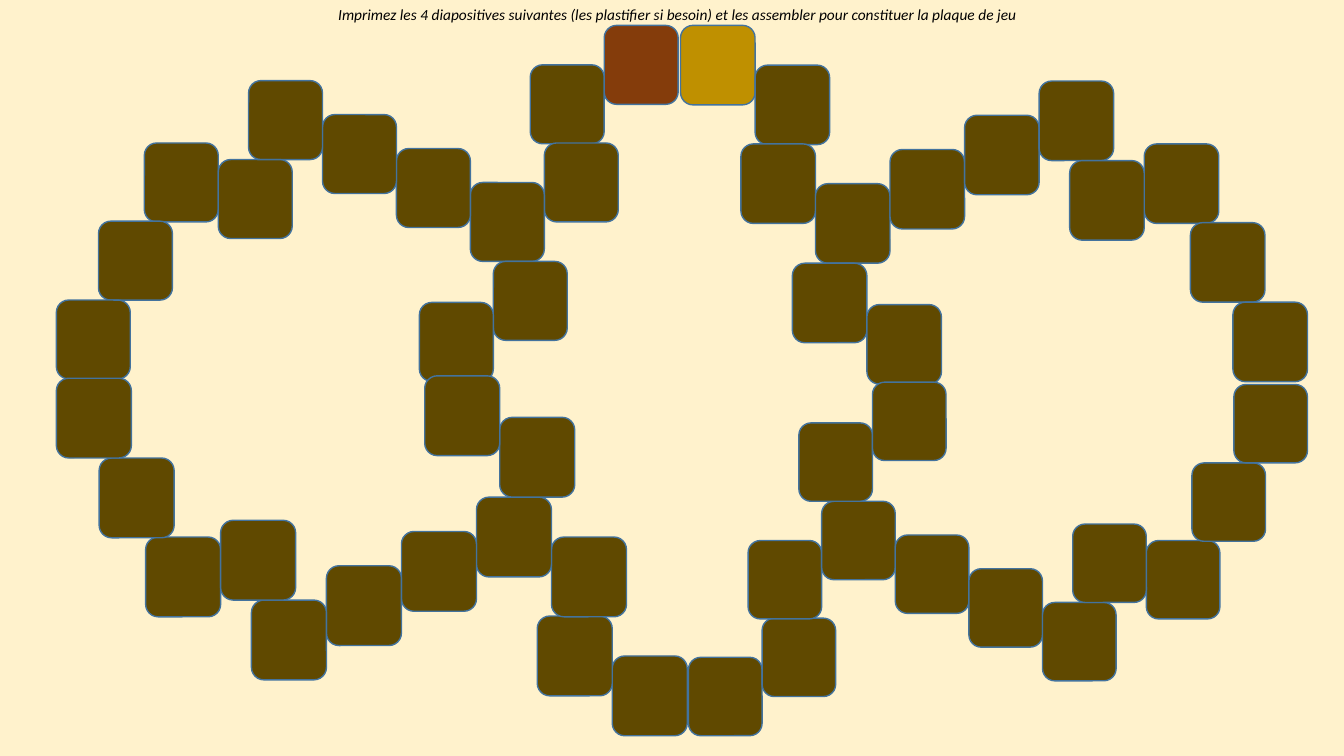
from pptx import Presentation
from pptx.dml.color import RGBColor
from pptx.enum.shapes import MSO_SHAPE as SHAPE
from pptx.enum.text import MSO_AUTO_SIZE as AUTO_SIZE, PP_ALIGN as ALIGN
from pptx.util import Cm, Pt

BACKGROUND, TILE, EDGE = "FFF2CC", "604900", "43739E"
START, FINISH = "BF9000", "843C0B"

# Column and row of each tile in the top right quarter, in tile sizes
TRACK = [(0, 0), (1, 0.5), (0.81, 1.49), (1.81, 1.99), (2.81, 1.56),
         (3.81, 1.13), (4.81, 0.7), (6.22, 1.49), (5.22, 1.7),
         (6.84, 2.48), (7.41, 3.48), (1.5, 2.99), (2.5, 3.51)]
COLS = max(x for x, y in TRACK) + 1
ROWS = max(y for x, y in TRACK) + 1

# Box (left, top, width, height in cm), mirrored across, mirrored down, first tile
QUARTERS = [
    ((17.15, 0.64, 15.8, 9.04), False, False, START),
    ((17.35, 9.63, 15.6, 8.91), False, True, TILE),
    ((1.42, 0.64, 15.67, 8.97), True, False, FINISH),
    ((1.42, 9.47, 15.9, 9.07), True, True, TILE),
]


def rgb(value):
    return RGBColor.from_string(value)


def add_quarter(slide, box, mirror_x, mirror_y, first_color):
    """Place one quarter of the game track inside its box."""
    left, top, width, height = box
    tile_w, tile_h = width / COLS, height / ROWS
    group = slide.shapes.add_group_shape()
    for i, (x, y) in enumerate(TRACK):
        col = COLS - 1 - x if mirror_x else x
        row = ROWS - 1 - y if mirror_y else y
        s = group.shapes.add_shape(
            SHAPE.ROUNDED_RECTANGLE, Cm(left + col * tile_w),
            Cm(top + row * tile_h), Cm(tile_w), Cm(tile_h))
        s.shadow.inherit = False
        s.fill.solid()
        s.fill.fore_color.rgb = rgb(TILE if i else first_color)
        s.line.color.rgb = rgb(EDGE)
        s.line.width = Pt(1)


def add_instruction(slide, left, top, width, height):
    """Place the centred printing instruction."""
    tf = slide.shapes.add_textbox(Cm(left), Cm(top), Cm(width), Cm(height)).text_frame
    tf.word_wrap = True
    tf.auto_size = AUTO_SIZE.SHAPE_TO_FIT_TEXT
    tf.text = ("Imprimez les 4 diapositives suivantes (les plastifier si besoin) "
               "et les assembler pour constituer la plaque de jeu")
    p = tf.paragraphs[0]
    p.alignment = ALIGN.CENTER
    font = p.runs[0].font
    font.name, font.size, font.italic = "Calibri", Pt(11), True
    font.color.rgb = rgb("000000")


def main():
    prs = Presentation()
    prs.slide_width, prs.slide_height = Cm(33.87), Cm(19.05)
    slide = prs.slides.add_slide(prs.slide_layouts[6])
    slide.background.fill.solid()
    slide.background.fill.fore_color.rgb = rgb(BACKGROUND)

    # Game track
    for quarter in QUARTERS:
        add_quarter(slide, *quarter)

    # Instruction
    add_instruction(slide, 0.03, 0, 34.11, 0.73)
    prs.save("out.pptx")


if __name__ == "__main__":
    main()
